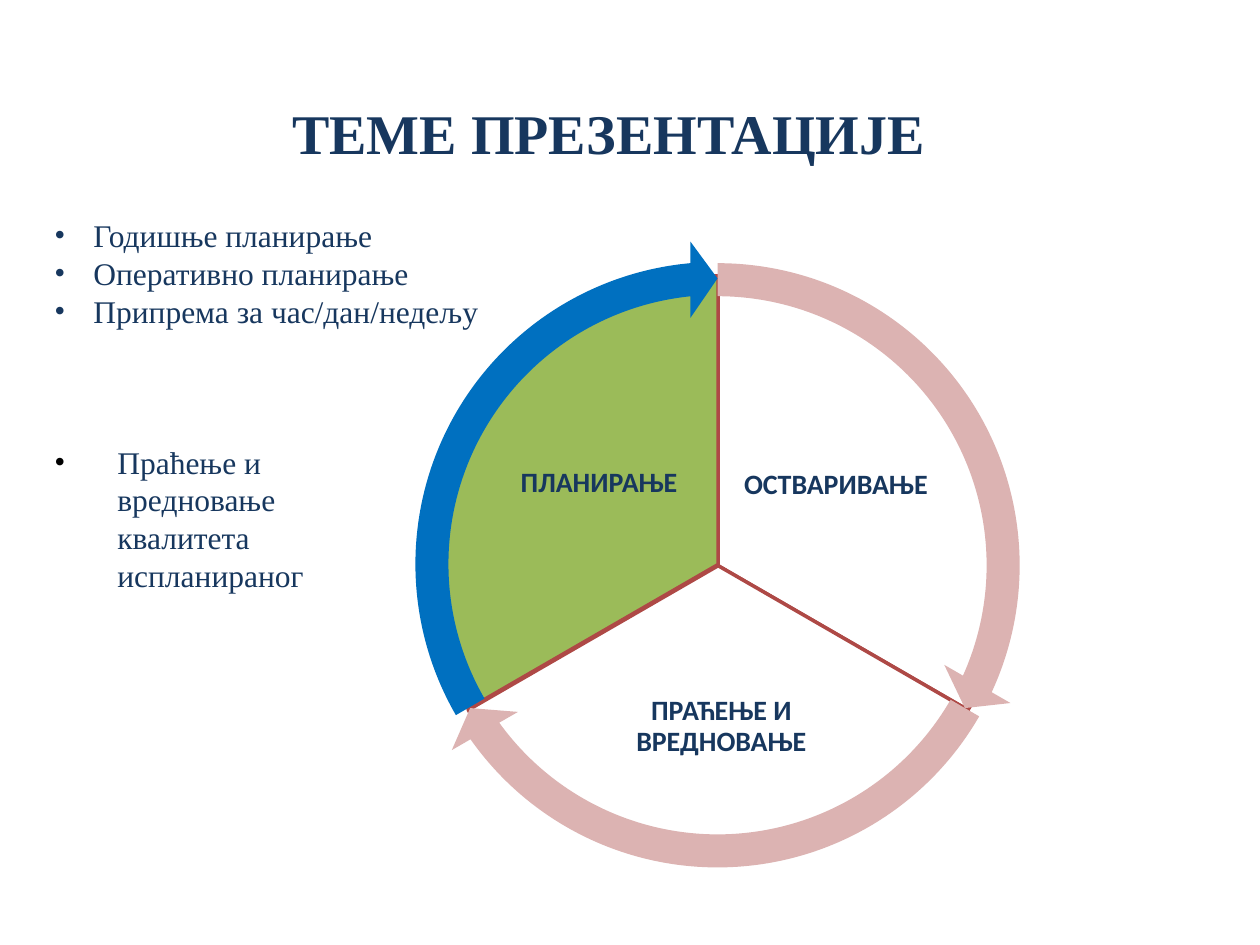
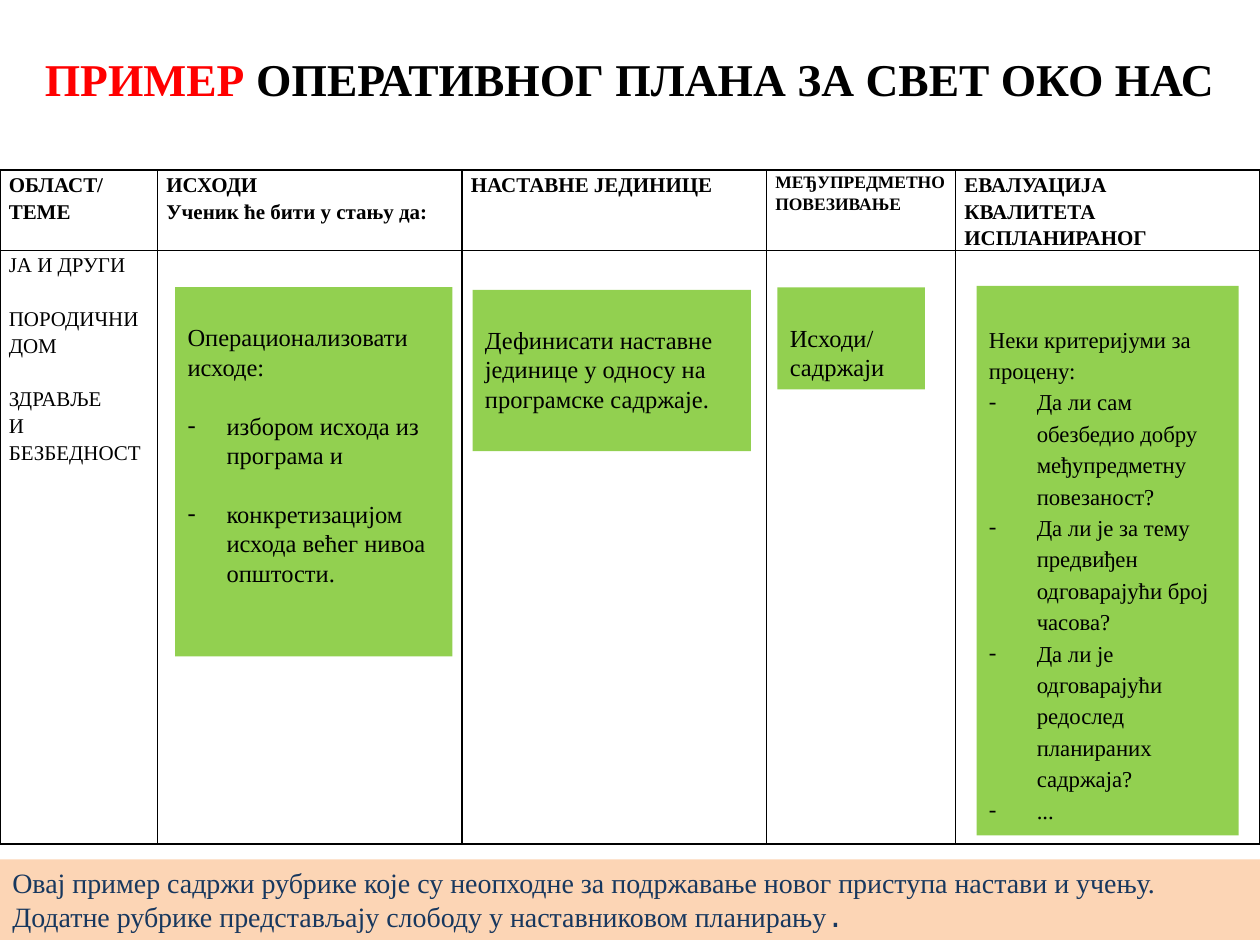
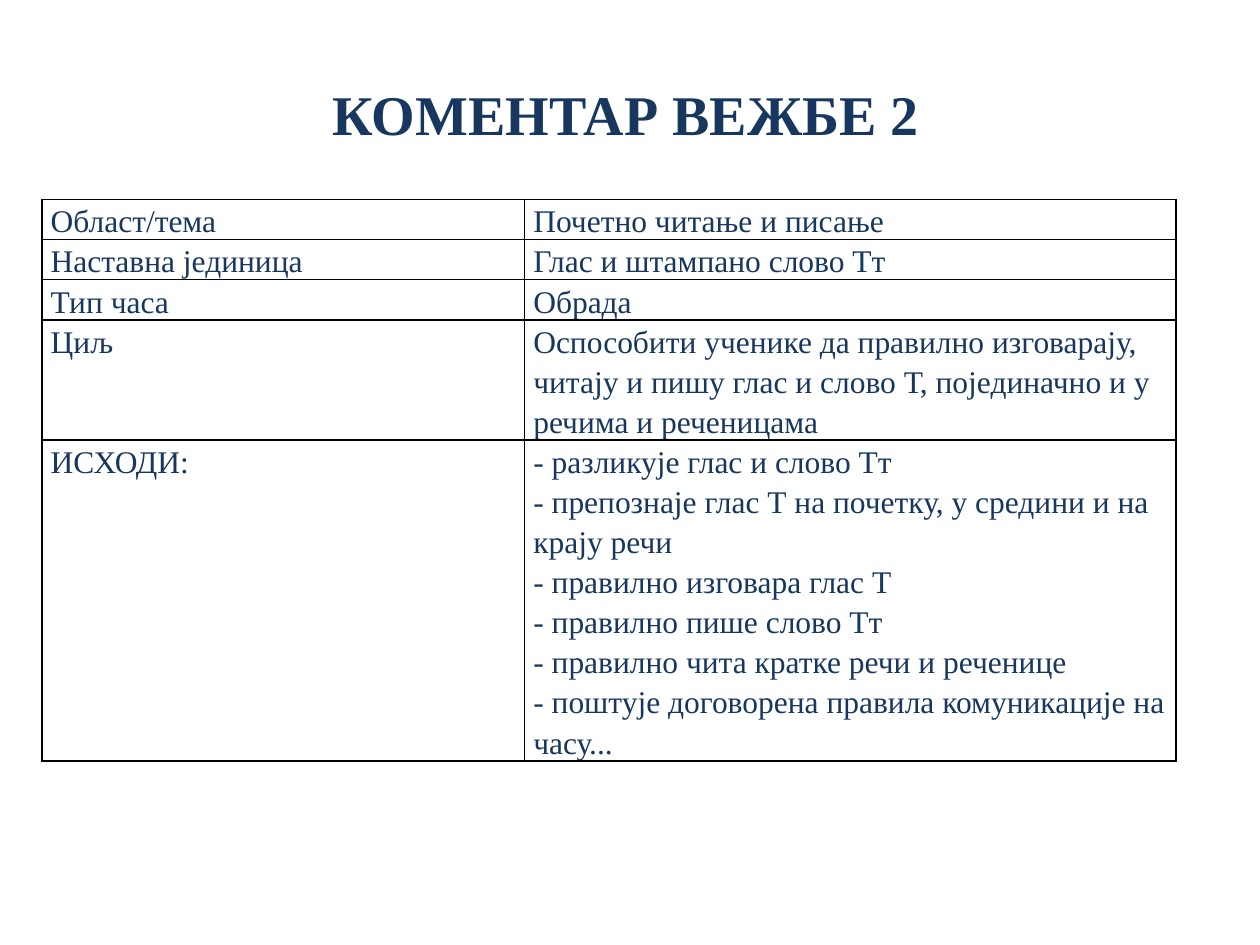
from dataclasses import dataclass, replace
from typing import NamedTuple

from lxml import etree
from pptx import Presentation
from pptx.dml.color import RGBColor
from pptx.enum.shapes import MSO_SHAPE
from pptx.enum.text import MSO_ANCHOR, PP_ALIGN
from pptx.oxml.ns import qn
from pptx.util import Inches, Pt

RECTANGLE, PIE, ARC_ARROW = MSO_SHAPE.RECTANGLE, MSO_SHAPE.PIE, MSO_SHAPE.CIRCULAR_ARROW
LEFT, CENTER = PP_ALIGN.LEFT, PP_ALIGN.CENTER
TOP, MIDDLE = MSO_ANCHOR.TOP, MSO_ANCHOR.MIDDLE

NAVY = RGBColor(0x17, 0x37, 0x5E)
BLACK = RGBColor(0, 0, 0)
WHITE = RGBColor(0xFF, 0xFF, 0xFF)
RED = RGBColor(0xFF, 0, 0)
BRICK = RGBColor(0xAE, 0x49, 0x46)
PINK = RGBColor(0xDC, 0xB3, 0xB2)
BLUE = RGBColor(0, 0x70, 0xC0)
OLIVE = RGBColor(0x9B, 0xBB, 0x59)
LIME = RGBColor(0x92, 0xD0, 0x50)
PEACH = RGBColor(0xFC, 0xD5, 0xB5)

SERIF, SANS, MONO = "Times New Roman", "Calibri", "DejaVu Sans Mono"

SLIDE_W, SLIDE_H = Inches(10), Inches(7.5)
COL, ROW = SLIDE_W / 100, SLIDE_H / 75  # a grid of 100 columns by 75 rows
DEGREE = 0.6  # one degree in shape adjustment units


class Area(NamedTuple):
    """A place on the slide, in grid columns and rows."""
    left: float
    top: float
    width: float
    height: float

    def emu(self) -> tuple[int, int, int, int]:
        return (round(self.left * COL), round(self.top * ROW),
                round(self.width * COL), round(self.height * ROW))

    def lifted(self, rows: float) -> "Area":
        return self._replace(top=self.top - rows)


@dataclass(frozen=True)
class Style:
    """Text look; spacing is a share of the line or an exact length."""
    size: float
    color: RGBColor = NAVY
    bold: bool = False
    font: str = SERIF
    align: PP_ALIGN = LEFT
    spacing: float | Pt | None = None


@dataclass(frozen=True)
class Para:
    text: str
    bullet: str = ""
    bullet_color: RGBColor | None = None
    hang: float = 0.31
    before: float = 0


@dataclass(frozen=True)
class Sector:
    label: str
    label_area: Area
    start: int
    end: int
    fill: RGBColor
    arrow: RGBColor
    lift: float = 0


@dataclass(frozen=True)
class Note:
    area: Area
    style: Style
    paras: list


TITLE = Style(32, bold=True, align=CENTER)
PLAN_TITLE = replace(TITLE, size=26, color=BLACK)
BODY = Style(18)
SECTOR_LABEL = Style(16, bold=True, font=SANS, align=CENTER, spacing=0.9)
NOTE = Style(14, BLACK)
CRITERIA = Style(13, BLACK, spacing=1.15)
FOOTER = Style(16)
PLAN_HEAD = Style(12, BLACK, bold=True, spacing=Pt(15.3))
PLAN_HEAD_SMALL = replace(PLAN_HEAD, size=10, spacing=Pt(12.7))
PLAN_BODY = replace(PLAN_HEAD, bold=False)
COMMENT = Style(18, spacing=Pt(22.9))


def format_run(run, style: Style) -> None:
    run.font.name = style.font
    run.font.size = Pt(style.size)
    run.font.bold = style.bold
    run.font.color.rgb = style.color


def add_bullet(paragraph, para: Para, font: str) -> None:
    props = paragraph._p.get_or_add_pPr()
    props.set("marL", str(Inches(para.hang)))
    props.set("indent", str(-Inches(para.hang)))
    if para.bullet_color is not None:
        color = etree.SubElement(props, qn("a:buClr"))
        etree.SubElement(color, qn("a:srgbClr"), val=str(para.bullet_color))
    etree.SubElement(props, qn("a:buFont"), typeface=font)
    etree.SubElement(props, qn("a:buChar"), char=para.bullet)


def write(frame, paras: list, style: Style) -> None:
    """Fill a text frame; plain strings become paragraphs without bullets."""
    for number, item in enumerate(paras):
        para = item if isinstance(item, Para) else Para(item)
        paragraph = frame.paragraphs[0] if number == 0 else frame.add_paragraph()
        paragraph.text = para.text
        if para.bullet:
            add_bullet(paragraph, para, style.font)
        paragraph.alignment = style.align
        if style.spacing:
            paragraph.line_spacing = style.spacing
        if para.before:
            paragraph.space_before = Pt(para.before)
        for run in paragraph.runs:
            format_run(run, style)


def add_text(slide, area: Area, paras: list, style: Style,
             anchor: MSO_ANCHOR = TOP, inset: float | None = None) -> None:
    frame = slide.shapes.add_textbox(*area.emu()).text_frame
    frame.word_wrap = True
    frame.vertical_anchor = anchor
    if inset is not None:
        frame.margin_left = frame.margin_right = Inches(inset)
        frame.margin_top = frame.margin_bottom = Inches(inset)
    write(frame, paras, style)


def add_filled(slide, kind: MSO_SHAPE, area: Area, fill: RGBColor,
               line: RGBColor | None = None, adjustments: tuple = ()):
    shape = slide.shapes.add_shape(kind, *area.emu())
    shape.shadow.inherit = False
    shape.fill.solid()
    shape.fill.fore_color.rgb = fill
    if line is None:
        shape.line.fill.background()
    else:
        shape.line.color.rgb = line
        shape.line.width = Pt(2)
    for index, value in enumerate(adjustments):
        shape.adjustments[index] = value
    return shape


def add_panel(slide, area: Area, fill: RGBColor, paras: list, style: Style,
              anchor: MSO_ANCHOR = TOP, top_inset: float = 0.05):
    frame = add_filled(slide, RECTANGLE, area, fill).text_frame
    frame.word_wrap = True
    frame.vertical_anchor = anchor
    frame.margin_top = Inches(top_inset)
    write(frame, paras, style)
    return frame


def append_run(frame, text: str, style: Style) -> None:
    run = frame.paragraphs[0].add_run()
    run.text = text
    format_run(run, style)


def set_borders(cell) -> None:
    props = cell._tc.get_or_add_tcPr()
    for index, side in enumerate(("a:lnL", "a:lnR", "a:lnT", "a:lnB")):
        line = etree.Element(qn(side), w=str(Pt(1)))
        fill = etree.SubElement(line, qn("a:solidFill"))
        etree.SubElement(fill, qn("a:srgbClr"), val=str(BLACK))
        props.insert(index, line)


def add_grid(slide, left: float, top: float, widths: list, heights: list,
             cells: list) -> None:
    """Draw a ruled table; cells holds rows of (paragraphs, style) pairs."""
    area = Area(left, top, sum(widths), sum(heights))
    table = slide.shapes.add_table(len(heights), len(widths), *area.emu()).table
    table.first_row = table.horz_banding = False
    for column, width in zip(table.columns, widths):
        column.width = round(width * COL)
    for row, height, contents in zip(table.rows, heights, cells):
        row.height = round(height * ROW)
        for cell, (paras, style) in zip(row.cells, contents):
            cell.margin_left = cell.margin_right = Inches(0.07)
            cell.margin_top = cell.margin_bottom = 0
            cell.fill.background()
            set_borders(cell)
            write(cell.text_frame, paras, style)


WHEEL = Area(34.1, 22, 45.8, 45.8)
ARROW_RING = Area(31.25, 19.17, 51.4, 51.4)
ARROW_TIP = 5.46  # degrees taken by an arrowhead
SECTORS = [
    Sector("ОСТВАРИВАЊЕ", Area(58.2, 31.7, 16.3, 13.6), 270, 30, WHITE, PINK),
    Sector("ПРАЋЕЊЕ И ВРЕДНОВАЊЕ", Area(45, 51.7, 24.5, 12), 30, 150, WHITE, PINK),
    Sector("ПЛАНИРАЊЕ", Area(39.4, 31.6, 16.3, 13.6), 150, 270, OLIVE, BLUE, lift=0.1),
]
TOPICS = [
    Para("Годишње планирање", "•"),
    Para("Оперативно планирање", "•"),
    Para("Припрема за час/дан/недељу", "•"),
    Para("Праћење и\vвредновање\vквалитета\vиспланираног", "•", BLACK,
         hang=0.5, before=64.6),
]


def build_topics(slide) -> None:
    add_text(slide, Area(3.33, 4.2, 90, 12.5), ["ТЕМЕ ПРЕЗЕНТАЦИЈЕ"], TITLE, MIDDLE)
    for sector in SECTORS:
        add_filled(slide, PIE, WHEEL.lifted(sector.lift), sector.fill, BRICK,
                   (sector.start * DEGREE, sector.end * DEGREE))
        add_text(slide, sector.label_area, [sector.label], SECTOR_LABEL, MIDDLE, 0.02)
    for sector in SECTORS:
        ring = ARROW_RING.lifted(sector.lift)
        add_filled(slide, ARC_ARROW, ring, sector.arrow, adjustments=(
            0.051, ARROW_TIP * DEGREE, (sector.end - ARROW_TIP) * DEGREE,
            sector.start * DEGREE, 0.059))
    add_text(slide, Area(3.33, 16.67, 47.5, 31.3), TOPICS, BODY)


PLAN_WIDTHS = [12.5, 24.17, 24.17, 15, 24.16]
PLAN_HEADS = [
    (["ОБЛАСТ/", "ТЕМЕ"], PLAN_HEAD),
    (["ИСХОДИ", "Ученик ће бити у стању да:"], PLAN_HEAD),
    (["НАСТАВНЕ ЈЕДИНИЦЕ"], PLAN_HEAD),
    (["МЕЂУПРЕДМЕТНО ПОВЕЗИВАЊЕ"], PLAN_HEAD_SMALL),
    (["ЕВАЛУАЦИЈА", "КВАЛИТЕТА", "ИСПЛАНИРАНОГ"], PLAN_HEAD),
]
PLAN_THEMES = ["ЈА И ДРУГИ", Para("ПОРОДИЧНИ", before=15.3), "ДОМ",
               Para("ЗДРАВЉЕ", before=15.3), "И БЕЗБЕДНОСТ"]
PLAN_NOTES = [
    Note(Area(37.5, 23, 22.1, 12.8), NOTE,
         ["Дефинисати наставне јединице у односу на програмске садржаје."]),
    Note(Area(13.9, 22.8, 22, 29.3), NOTE, [
        "Операционализовати исходе:",
        Para("избором исхода из програма и", "-", before=16.8),
        Para("конкретизацијом исхода већег нивоа општости.", "-", before=16.8)]),
    Note(Area(61.7, 22.8, 11.7, 8.1), NOTE, ["Исходи/", "садржаји"]),
    Note(Area(77.5, 22.7, 20.8, 43.6), CRITERIA, ["Неки критеријуми за процену:"] + [
        Para(question, "-", hang=0.38) for question in (
            "Да ли сам обезбедио добру међупредметну повезаност?",
            "Да ли је за тему предвиђен одговарајући број часова?",
            "Да ли је одговарајући редослед планираних садржаја?",
            "...")]),
]
PLAN_FOOTER = ("Овај пример садржи рубрике које су неопходне за подржавање новог "
               "приступа настави и учењу. Додатне рубрике представљају слободу "
               "у наставниковом планирању")


def build_plan(slide) -> None:
    title = add_panel(slide, Area(0, 0, 100, 12.5), WHITE, ["ПРИМЕР"],
                      replace(PLAN_TITLE, color=RED), MIDDLE)
    append_run(title, " ОПЕРАТИВНОГ ПЛАНА ЗА СВЕТ ОКО НАС", PLAN_TITLE)

    empty_cells = [([], PLAN_BODY)] * (len(PLAN_WIDTHS) - 1)
    add_grid(slide, 0, 13.5, PLAN_WIDTHS, [6.4, 47.1],
             [PLAN_HEADS, [(PLAN_THEMES, PLAN_BODY)] + empty_cells])
    for note in PLAN_NOTES:
        add_panel(slide, note.area, LIME, note.paras, note.style, top_inset=0.28)

    footer = add_panel(slide, Area(0, 68.2, 100, 6.4), PEACH, [PLAN_FOOTER], FOOTER)
    append_run(footer, ".", replace(FOOTER, font=MONO))


LESSON = [
    ("Област/тема", ["Почетно читање и писање"]),
    ("Наставна јединица", ["Глас и штампано слово Тт"]),
    ("Тип часа", ["Обрада"]),
    ("Циљ", ["Оспособити ученике да правилно изговарају, читају и пишу глас "
             "и слово Т, појединачно и у речима и реченицама"]),
    ("ИСХОДИ:", [
        "- разликује глас и слово Тт",
        "- препознаје глас Т на почетку, у средини и на крају речи",
        "- правилно изговара глас Т",
        "- правилно пише слово Тт",
        "- правилно чита кратке речи и реченице",
        "- поштује договорена правила комуникације на часу..."]),
]
LESSON_LINES = [1, 1, 1, 3, 8]


def build_comment(slide) -> None:
    add_grid(slide, 3.33, 15.83, [38.3, 51.7], [3.18 * lines for lines in LESSON_LINES],
             [[([heading], COMMENT), (details, COMMENT)] for heading, details in LESSON])
    add_text(slide, Area(0, 5.97, 99.4, 6), ["КОМЕНТАР ВЕЖБЕ 2"], TITLE, MIDDLE)


def main() -> None:
    deck = Presentation()
    deck.slide_width, deck.slide_height = SLIDE_W, SLIDE_H
    blank = deck.slide_layouts[6]
    for build in (build_topics, build_plan, build_comment):
        build(deck.slides.add_slide(blank))
    deck.save("out.pptx")


if __name__ == "__main__":
    main()
